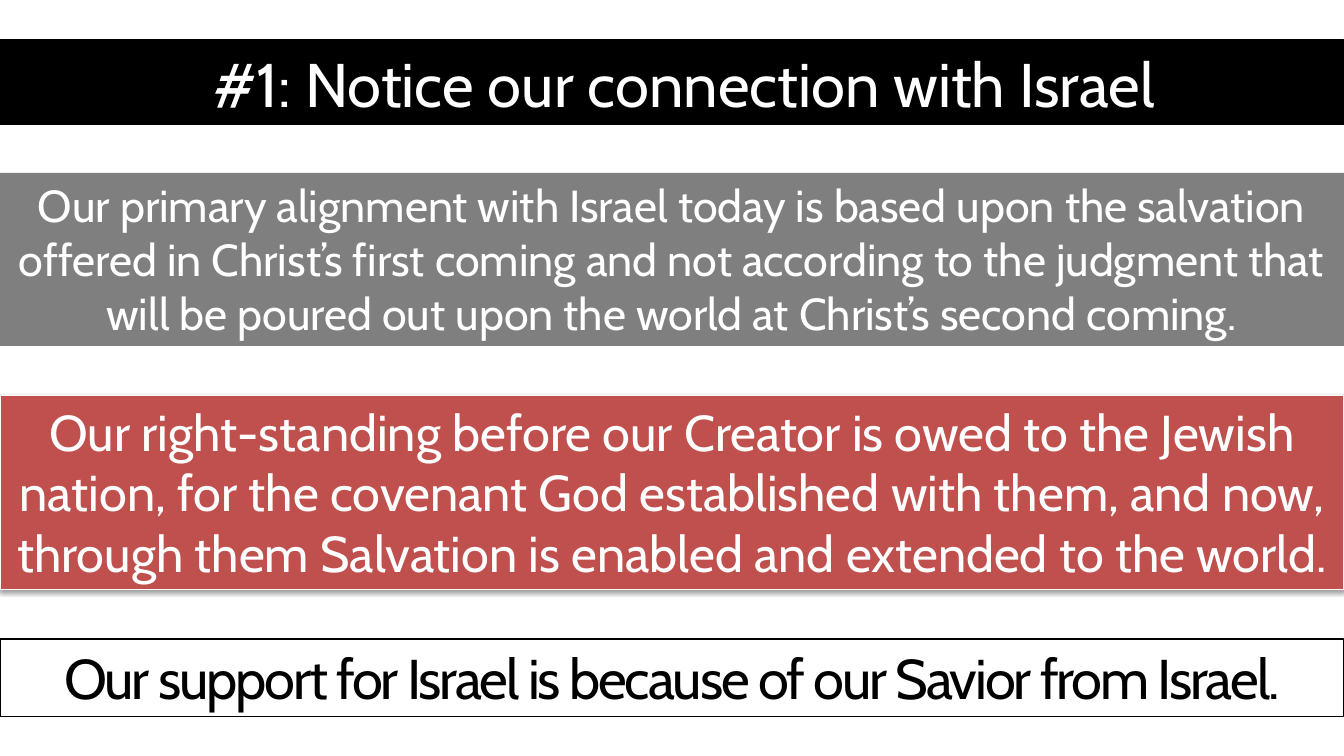
from dataclasses import dataclass

from lxml import etree
from pptx import Presentation
from pptx import util as u
from pptx.dml.color import RGBColor
from pptx.enum import shapes, text
from pptx.oxml import parse_xml
from pptx.oxml.ns import nsdecls, qn

EMU_PER_PX = 914400 / 100.8
WIDTH, HEIGHT = 1344, 756


@dataclass(frozen=True)
class Theme:
    font: str = "Cabin"
    black: str = "000000"
    white: str = "FFFFFF"
    red: str = "C0504D"
    pale: str = "F9F9F9"
    title: int = 44
    statement: int = 32
    emphasis: int = 36
    conclusion: int = 40
    border: float = 0.75


def px(length):
    return u.Emu(round(length * EMU_PER_PX))


def write_text(shape, wording, *, font, size, color, spacing=None, indent=0,
               anchor=text.MSO_ANCHOR.TOP):
    frame = shape.text_frame
    frame.word_wrap = True
    frame.auto_size = text.MSO_AUTO_SIZE.SHAPE_TO_FIT_TEXT
    frame.vertical_anchor = anchor
    paragraph = frame.paragraphs[0]
    paragraph.alignment = text.PP_ALIGN.CENTER
    if indent:
        properties = paragraph._p.get_or_add_pPr()
        properties.set("marL", str(px(indent)))
        properties.set("indent", "0")
    run = paragraph.add_run()
    run.text = wording
    run.font.name = font
    run.font.size = u.Pt(size)
    run.font.color.rgb = RGBColor.from_string(color)
    if spacing is not None:
        run.font._element.set("spc", str(round(spacing * 100)))


class SlideBuilder:
    def __init__(self, slide, theme):
        self.slide = slide
        self.theme = theme

    def banner(self, top, height, wording, size, *, fill, color, line=None,
               opacity=None, shadow=False, **text_format):
        """Add a full-width band with centred text."""
        shape = self.slide.shapes.add_shape(
            shapes.MSO_SHAPE.RECTANGLE, 0, px(top), px(WIDTH), px(height))
        shape.fill.solid()
        shape.fill.fore_color.rgb = RGBColor.from_string(fill)
        if opacity is not None:
            fill_color = shape._element.spPr.find(qn("a:solidFill"))[0]
            etree.SubElement(fill_color, qn("a:alpha"), val=str(opacity * 1000))
        if line:
            shape.line.color.rgb = RGBColor.from_string(line)
            shape.line.width = u.Pt(self.theme.border)
        else:
            shape.line.fill.background()
        shape.shadow.inherit = False
        if shadow:
            self.soft_shadow(shape)
        write_text(shape, wording, font=self.theme.font, size=size,
                   color=color, **text_format)

    def soft_shadow(self, shape):
        """Cast a faint shadow straight down."""
        effects = shape._element.spPr.find(qn("a:effectLst"))
        effects.append(parse_xml(
            f'<a:outerShdw {nsdecls("a")} blurRad="{u.Pt(3.1)}" '
            f'dist="{u.Pt(1.6)}" dir="5400000" rotWithShape="0">'
            f'<a:srgbClr val="{self.theme.black}"><a:alpha val="38000"/>'
            '</a:srgbClr></a:outerShdw>'))


def main():
    presentation = Presentation()
    presentation.slide_width = px(WIDTH)
    presentation.slide_height = px(HEIGHT)
    theme = Theme()
    slide = presentation.slides.add_slide(presentation.slide_layouts[6])
    builder = SlideBuilder(slide, theme)

    # Title band
    builder.banner(40, 85, "#1: Notice our connection with Israel", theme.title,
                   fill=theme.black, line=theme.black, color=theme.white,
                   indent=25, anchor=text.MSO_ANCHOR.MIDDLE)

    # Translucent statement
    builder.banner(
        173, 173,
        "Our primary alignment with Israel today is based upon the salvation "
        "offered in Christ’s first coming and not according to the judgment "
        "that will be poured out upon the world at Christ’s second coming.",
        theme.statement, fill=theme.black, opacity=50, color=theme.white)

    # Conclusion
    builder.banner(
        639, 78, "Our support for Israel is because of our Savior from Israel.",
        theme.conclusion, fill=theme.white, line=theme.black,
        color=theme.black, spacing=-1.5)

    # Red emphasis band
    builder.banner(
        396, 194,
        "Our right-standing before our Creator is owed to the Jewish nation, "
        "for the covenant God established with them, and now, through them "
        "Salvation is enabled and extended to the world.",
        theme.emphasis, fill=theme.red, line=theme.pale, color=theme.white,
        shadow=True)

    presentation.save("out.pptx")


if __name__ == "__main__":
    main()
